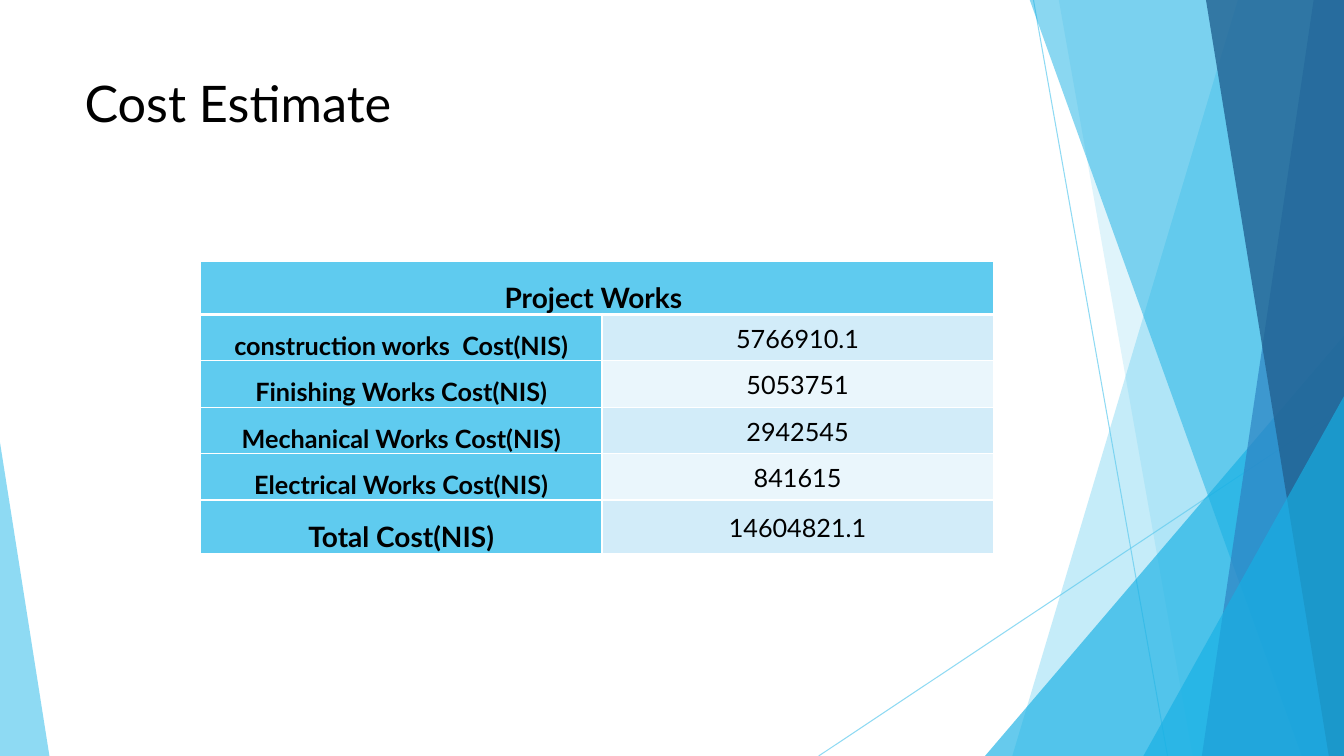
from lxml import etree
from pptx import Presentation
from pptx.dml.color import RGBColor
from pptx.enum.shapes import MSO_CONNECTOR, MSO_SHAPE
from pptx.enum.text import MSO_ANCHOR, PP_ALIGN
from pptx.oxml.ns import qn
from pptx.util import Inches, Pt

STRAIGHT = MSO_CONNECTOR.STRAIGHT
TRIANGLE = MSO_SHAPE.ISOSCELES_TRIANGLE
TOP, MIDDLE, BOTTOM = MSO_ANCHOR.TOP, MSO_ANCHOR.MIDDLE, MSO_ANCHOR.BOTTOM
LEFT, CENTER = PP_ALIGN.LEFT, PP_ALIGN.CENTER

WIDTH, HEIGHT = 13.33, 7.5
FONT = "Lato"
SKY, AZURE, BLUE, NAVY = "5FCBEF", "17B0E4", "2E83C3", "226292"
BANDS = ["D2ECF9", "EAF6FC"]
WHITE, BLACK = "FFFFFF", "000000"

TITLE = "Cost Estimate"
TABLE_HEADING = "Project Works "
COSTS = [
    ("construction works  Cost(NIS)", "5766910.1"),
    ("Finishing Works Cost(NIS)", "5053751"),
    ("Mechanical Works Cost(NIS)", "2942545"),
    ("Electrical Works Cost(NIS)", "841615"),
    ("Total Cost(NIS)", "14604821.1"),
]
COLUMN_WIDTHS = [3.98, 3.88]
TALL_ROW, ROW = 0.53, 0.46

RAYS = [((10.25, 0), (11.58, HEIGHT)), ((WIDTH, 4.03), (8.12, HEIGHT))]
# Panels: top-left x, bottom-left x, colour, opacity; each runs to the right edge.
# Corners: left, width, height, apex position, colour, opacity; each stands on the bottom edge.
FACETS = [
    ("panel", 12.28, 10.04, SKY, 36),
    ("panel", 10.5, 11.83, SKY, 20),
    ("corner", 9.77, 3.56, 4.17, 1, AZURE, 66),
    ("panel", 10.21, 12.91, AZURE, 50),
    ("panel", 13.03, 11.92, BLUE, 70),
    ("panel", 11.96, 13.18, NAVY, 80),
    ("corner", 11.34, 1.99, 3.57, 1, AZURE, 66),
    ("corner", 0, 0.49, 3.11, 0, SKY, 70),
]


def color(value):
    return RGBColor.from_string(value)


def set_opacity(element, percent):
    for tint in element.iter(qn("a:srgbClr")):
        etree.SubElement(tint, qn("a:alpha"), val=str(percent * 1000))


def add_ray(page, start, end):
    ray = page.shapes.add_connector(STRAIGHT, *map(Inches, start + end))
    ray.line.color.rgb = color(SKY)
    ray.line.width = Pt(0.75)
    properties = ray._element.spPr
    set_opacity(properties, 70)
    etree.SubElement(properties, qn("a:effectLst"))


def paint(shape, fill, opacity):
    shape.shadow.inherit = False
    shape.fill.solid()
    shape.fill.fore_color.rgb = color(fill)
    set_opacity(shape._element.spPr, opacity)
    shape.line.fill.background()


def add_panel(page, top_x, bottom_x, fill, opacity):
    outline = [(top_x, -0.01), (WIDTH, -0.01), (WIDTH, HEIGHT), (bottom_x, HEIGHT)]
    points = [(Inches(x), Inches(y)) for x, y in outline]
    builder = page.shapes.build_freeform(*points[0])
    builder.add_line_segments(points[1:], close=True)
    paint(builder.convert_to_shape(), fill, opacity)


def add_corner(page, left, width, height, apex, fill, opacity):
    corner = page.shapes.add_shape(
        TRIANGLE, Inches(left), Inches(HEIGHT - height), Inches(width), Inches(height))
    corner.adjustments[0] = apex
    paint(corner, fill, opacity)


def write(frame, text, size, bold=False, align=LEFT, spacing=None):
    para = frame.paragraphs[0]
    para.alignment = align
    para.line_spacing = spacing
    span = para.add_run()
    span.text = text
    span.font.name = FONT
    span.font.size = Pt(size)
    span.font.bold = bold
    span.font.color.rgb = color(BLACK)


def set_borders(cell, bottom):
    """Draw white cell edges, with the bottom one at its own width in points."""
    properties = cell._tc.get_or_add_tcPr()
    for position, (side, width) in enumerate(
            [("lnL", 1), ("lnR", 1), ("lnT", 1), ("lnB", bottom)]):
        edge = etree.Element(qn("a:" + side), w=str(Pt(width)))
        fill = etree.SubElement(edge, qn("a:solidFill"))
        etree.SubElement(fill, qn("a:srgbClr"), val=WHITE)
        properties.insert(position, edge)


def fill_cell(cell, fill, text="", size=18, bold=False, anchor=MIDDLE, bottom=1):
    cell.margin_left = cell.margin_right = Inches(0.07)
    cell.margin_top = cell.margin_bottom = 0
    cell.vertical_anchor = anchor
    cell.fill.solid()
    cell.fill.fore_color.rgb = color(fill)
    set_borders(cell, bottom)
    if text:
        write(cell.text_frame, text, size, bold, CENTER, 1.07)


def add_cost_table(page):
    heights = [TALL_ROW] + [ROW] * (len(COSTS) - 1) + [TALL_ROW]
    table = page.shapes.add_table(
        len(heights), len(COLUMN_WIDTHS), Inches(1.99), Inches(2.59),
        Inches(sum(COLUMN_WIDTHS)), Inches(sum(heights))).table
    for column, width in zip(table.columns, COLUMN_WIDTHS):
        column.width = Inches(width)
    for row, height in zip(table.rows, heights):
        row.height = Inches(height)

    heading, covered = table.cell(0, 0), table.cell(0, 1)
    heading.merge(covered)
    fill_cell(heading, SKY, TABLE_HEADING, 20, True, BOTTOM, bottom=3)
    fill_cell(covered, SKY, bottom=3)
    for index, (label, cost) in enumerate(COSTS):
        size = 20 if index == len(COSTS) - 1 else 18
        fill_cell(table.cell(index + 1, 0), SKY, label, size, True, BOTTOM)
        fill_cell(table.cell(index + 1, 1), BANDS[index % 2], cost)


def add_title(page):
    box = page.shapes.add_textbox(Inches(0.74), Inches(0.67), Inches(9.4), Inches(1.44))
    box.text_frame.word_wrap = True
    box.text_frame.vertical_anchor = TOP
    write(box.text_frame, TITLE, 36)


def main():
    deck = Presentation()
    deck.slide_width, deck.slide_height = Inches(WIDTH), Inches(HEIGHT)
    page = deck.slides.add_slide(deck.slide_layouts[6])
    for start, end in RAYS:
        add_ray(page, start, end)
    draw = {"panel": add_panel, "corner": add_corner}
    for kind, *details in FACETS:
        draw[kind](page, *details)
    add_title(page)
    add_cost_table(page)
    deck.save("out.pptx")


if __name__ == "__main__":
    main()
